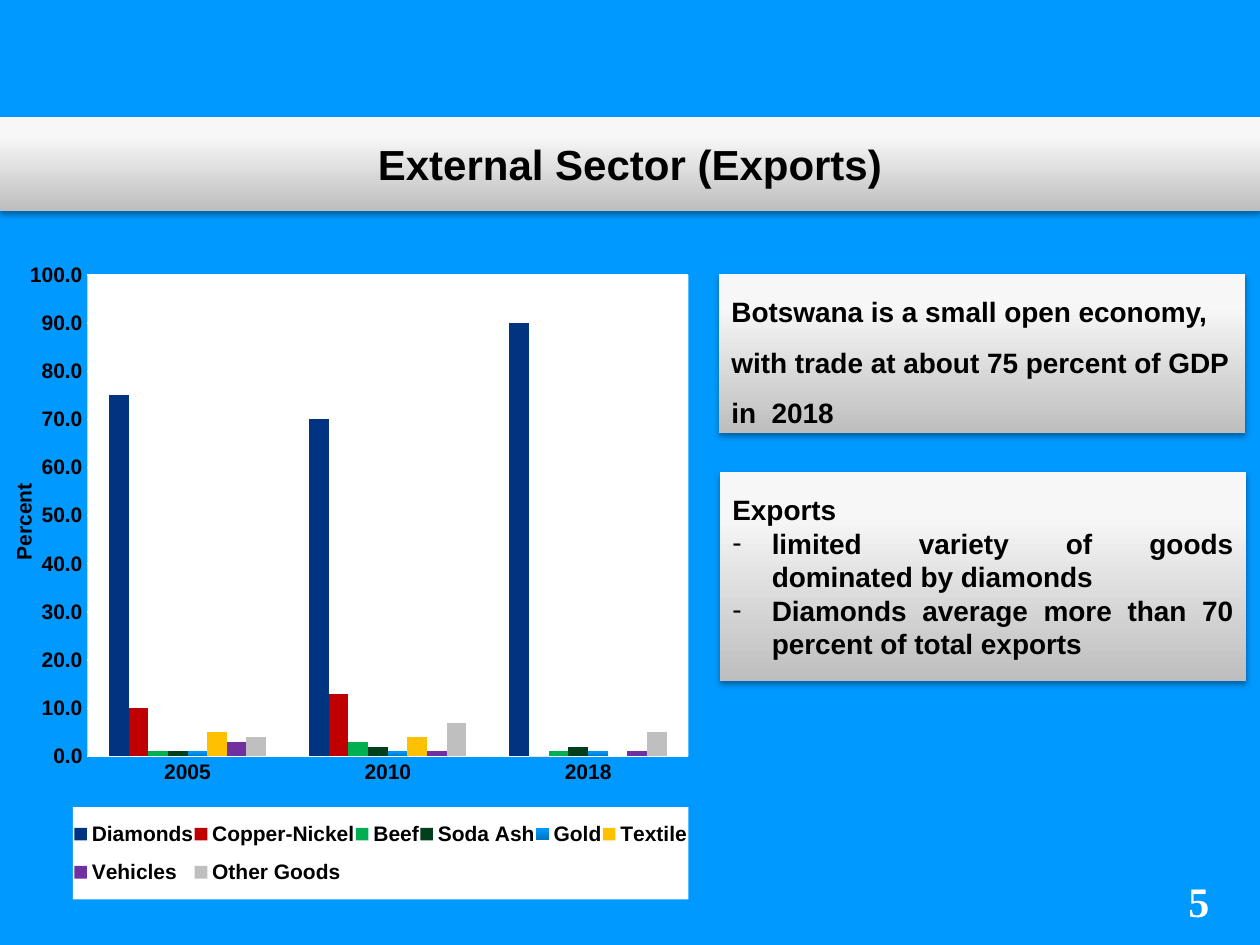
from lxml import etree
from pptx import Presentation
from pptx.chart.data import CategoryChartData
from pptx.dml.color import RGBColor
from pptx.enum.chart import XL_CHART_TYPE, XL_LEGEND_POSITION, XL_TICK_MARK
from pptx.enum.shapes import MSO_SHAPE
from pptx.enum.text import MSO_ANCHOR, PP_ALIGN
from pptx.oxml import parse_xml
from pptx.oxml.ns import nsdecls, qn
from pptx.util import Emu, Pt

COLUMNS = XL_CHART_TYPE.COLUMN_CLUSTERED
LEGEND_RIGHT = XL_LEGEND_POSITION.RIGHT
NO_TICKS = XL_TICK_MARK.NONE
RECTANGLE = MSO_SHAPE.RECTANGLE
MIDDLE = MSO_ANCHOR.MIDDLE
LEFT, CENTER, JUSTIFY = PP_ALIGN.LEFT, PP_ALIGN.CENTER, PP_ALIGN.JUSTIFY

PX = 914400 / 126
FONT = "Arial"
COLORS = {
    "background": "0099FF", "text": "000000", "white": "FFFFFF",
    "Diamonds": "003380", "Copper-Nickel": "C00000", "Beef": "00B050",
    "Soda Ash": "003E1C", "Gold": "0094F7", "Textile": "FFC000",
    "Vehicles": "7030A0", "Other Goods": "BFBFBF",
}
# Gradient stops: percent along the way up, colour
PANEL_STOPS = [(0, "BEBEBE"), (80, "F7F7F7"), (100, "F8F8F8")]
GOLD_STOPS = [(0, "0072BE"), (80, "0094F7"), (100, "0095F8")]

YEARS = ["2005", "2010", "2018"]
EXPORT_SHARES = {
    "Diamonds": (75, 70, 90),
    "Copper-Nickel": (10, 13, 0),
    "Beef": (1, 3, 1),
    "Soda Ash": (1, 2, 2),
    "Gold": (1, 1, 1),
    "Textile": (5, 4, 0),
    "Vehicles": (3, 1, 1),
    "Other Goods": (4, 7, 5),
}


def box(*lengths):
    return [Emu(round(length * PX)) for length in lengths]


def color(name):
    return RGBColor.from_string(COLORS[name])


def style_font(font, size, color_name="text", name=FONT):
    font.name, font.size, font.bold = name, Pt(size), True
    font.color.rgb = color(color_name)


def fill_gradient(format_owner, properties, stops):
    """Fill with a gradient that runs from bottom to top."""
    format_owner.fill.solid()
    stop_xml = "".join(
        f'<a:gs pos="{percent * 1000}"><a:srgbClr val="{value}"/></a:gs>'
        for percent, value in stops)
    gradient = parse_xml(
        f'<a:gradFill {nsdecls("a")} rotWithShape="1"><a:gsLst>{stop_xml}</a:gsLst>'
        '<a:lin ang="16200000" scaled="0"/></a:gradFill>')
    solid = properties.find(qn("a:solidFill"))
    properties.replace(solid, gradient)


def style_panel(shape):
    """Grey gradient, no outline and a soft shadow below."""
    properties = shape._element.spPr
    fill_gradient(shape, properties, PANEL_STOPS)
    shape.line.fill.background()
    shape.shadow.inherit = False
    properties.find(qn("a:effectLst")).append(parse_xml(
        f'<a:outerShdw {nsdecls("a")} blurRad="40000" dist="23000" dir="5400000" '
        'rotWithShape="0"><a:srgbClr val="000000"><a:alpha val="35000"/>'
        '</a:srgbClr></a:outerShdw>'))
    shape.text_frame.word_wrap = True
    shape.text_frame.vertical_anchor = MIDDLE


def add_title(slide, text):
    title = slide.shapes.title
    title.left, title.top, title.width, title.height = box(0, 117, 1260, 94)
    style_panel(title)
    title.text_frame.text = text
    paragraph = title.text_frame.paragraphs[0]
    paragraph.alignment = CENTER
    style_font(paragraph.runs[0].font, 24)


def add_dash(paragraph):
    properties = paragraph._p.get_or_add_pPr()
    properties.set("marL", "285750")
    properties.set("indent", "-285750")
    etree.SubElement(properties, qn("a:buFont")).set("typeface", FONT)
    etree.SubElement(properties, qn("a:buChar")).set("char", "-")


def add_panel(slide, place, heading, points=(), alignment=LEFT, line_spacing=None):
    panel = slide.shapes.add_shape(RECTANGLE, *box(*place))
    style_panel(panel)
    panel.text_frame.text = "\n".join([heading, *points])
    for index, paragraph in enumerate(panel.text_frame.paragraphs):
        paragraph.alignment = alignment
        if line_spacing:
            paragraph.line_spacing = line_spacing
        if index:
            add_dash(paragraph)
        style_font(paragraph.runs[0].font, 16)


def layout_xml(x, y, width=None, height=None, inner=False):
    """Manual chart layout in fractions of the chart area."""
    parts = [("layoutTarget", "inner")] if inner else []
    parts += [("xMode", "edge"), ("yMode", "edge"), ("x", x), ("y", y)]
    if width:
        parts += [("w", width), ("h", height)]
    content = "".join(f'<c:{tag} val="{value}"/>' for tag, value in parts)
    return parse_xml(f'<c:layout {nsdecls("c")}><c:manualLayout>{content}'
                     '</c:manualLayout></c:layout>')


def area_xml(color_name=None):
    fill = "<a:noFill/>"
    if color_name:
        fill = f'<a:solidFill><a:srgbClr val="{COLORS[color_name]}"/></a:solidFill>'
    return parse_xml(f'<c:spPr {nsdecls("c", "a")}>{fill}<a:ln><a:noFill/></a:ln></c:spPr>')


def remove_layout(element):
    for layout in element.findall(qn("c:layout")):
        element.remove(layout)


def style_axes(chart):
    category_axis, value_axis = chart.category_axis, chart.value_axis
    for axis in (category_axis, value_axis):
        axis.major_tick_mark = axis.minor_tick_mark = NO_TICKS
        style_font(axis.tick_labels.font, 12)
    value_axis.minimum_scale, value_axis.maximum_scale = 0, 100
    value_axis.major_unit = 10
    value_axis.tick_labels.number_format = "0.0"
    value_axis.tick_labels.number_format_is_linked = False
    value_axis.format.line.fill.background()
    value_axis.has_major_gridlines = True
    for line in (category_axis.format.line, value_axis.major_gridlines.format.line):
        line.color.rgb = color("white")
        line.width = Pt(0.75)

    # Axis title, turned to read upwards
    axis_title = value_axis.axis_title
    axis_title.text_frame.text = "Percent"
    style_font(axis_title.text_frame.paragraphs[0].runs[0].font, 12)
    element = axis_title._element
    body = next(element.iter(qn("a:bodyPr")))
    body.set("rot", "-5400000")
    body.set("vert", "horz")
    remove_layout(element)
    element.find(qn("c:tx")).addnext(layout_xml(0.01, 0.42))


def style_legend(chart):
    chart.has_legend = True
    legend = chart.legend
    legend.position = LEGEND_RIGHT
    legend.include_layout = False
    style_font(legend.font, 12)
    element = legend._element
    remove_layout(element)
    has_position = element.find(qn("c:legendPos")) is not None
    element.insert(int(has_position), layout_xml(0.106, 0.872, 0.894, 0.127))
    element.find(qn("c:txPr")).addprevious(area_xml("white"))


def add_export_chart(slide):
    data = CategoryChartData(number_format="0.0")
    data.categories = YEARS
    for name, shares in EXPORT_SHARES.items():
        data.add_series(name, shares)
    chart = slide.shapes.add_chart(COLUMNS, *box(0, 175, 689, 725), data).chart
    chart.has_title = False
    style_font(chart.font, 12)
    style_axes(chart)
    style_legend(chart)

    # Chart and plot areas
    chart_space = chart._chartSpace
    chart_space.find(qn("c:chart")).addnext(area_xml())
    plot_area = next(chart_space.iter(qn("c:plotArea")))
    remove_layout(plot_area)
    plot_area.insert(0, layout_xml(0.127, 0.138, 0.873, 0.664, inner=True))
    plot_area.append(area_xml("white"))

    plot = chart.plots[0]
    plot.gap_width, plot.overlap, plot.vary_by_categories = 219, 0, False
    for series in plot.series:
        series.invert_if_negative = False
        series.format.fill.solid()
        series.format.fill.fore_color.rgb = color(series.name)
        if series.name == "Gold":
            properties = series._element.find(qn("c:spPr"))
            fill_gradient(series.format, properties, GOLD_STOPS)


def add_slide_number(slide, text):
    number = slide.shapes.add_textbox(*box(1176, 869, 84, 63))
    number.text_frame.word_wrap = True
    number.text_frame.text = text
    style_font(number.text_frame.paragraphs[0].runs[0].font, 24, "white", "Times New Roman")


def main():
    presentation = Presentation()
    presentation.slide_width, presentation.slide_height = box(1260, 945)
    slide = presentation.slides.add_slide(presentation.slide_layouts[5])
    slide.background.fill.solid()
    slide.background.fill.fore_color.rgb = color("background")

    add_title(slide, "External Sector (Exports)")
    add_slide_number(slide, "5")
    add_export_chart(slide)
    add_panel(slide, (719, 274, 526, 159),
              "Botswana is a small open economy, with trade at about 75 percent "
              "of GDP in  2018", line_spacing=1.5)
    add_panel(slide, (720, 472, 526, 209), "Exports",
              ["limited variety of goods dominated by diamonds",
               "Diamonds average more than 70 percent of total exports"], JUSTIFY)
    presentation.save("out.pptx")


if __name__ == "__main__":
    main()
